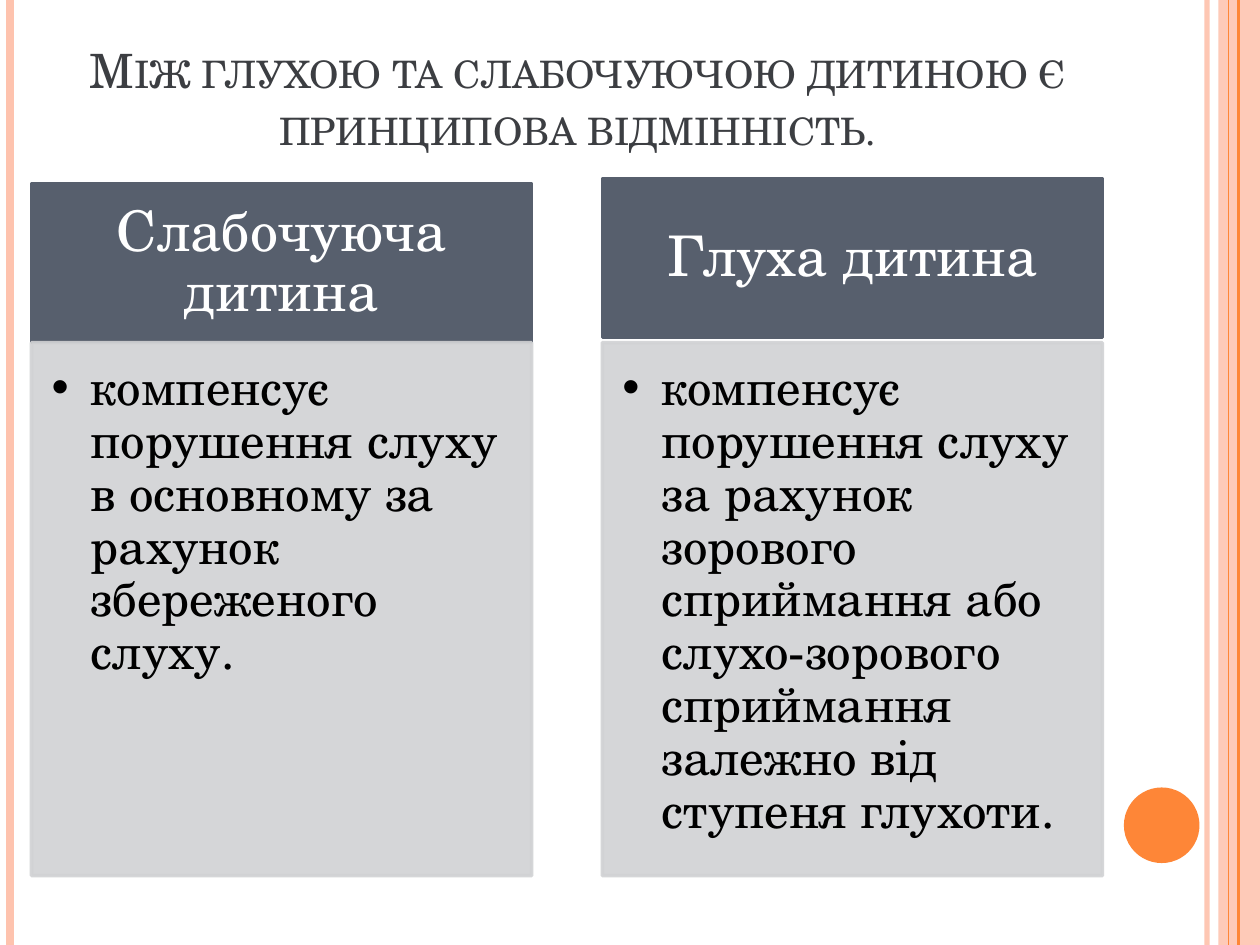
from dataclasses import dataclass

from pptx import Presentation
from pptx.dml.color import RGBColor
from pptx.enum.shapes import MSO_CONNECTOR, MSO_SHAPE
from pptx.enum.text import MSO_ANCHOR, MSO_AUTO_SIZE, PP_ALIGN
from pptx.oxml.ns import qn
from pptx.oxml.xmlchemy import OxmlElement
from pptx.util import Inches, Pt

COLS, ROWS = 100, 75


@dataclass(frozen=True)
class Theme:
    face: str = "TeX Gyre Schola"
    title: str = "3C3E42"
    slate: str = "575F6D"
    mist: str = "D1D2D4"
    peach: str = "FEC3AE"
    flame: str = "FE8637"
    white: str = "FFFFFF"
    black: str = "000000"
    big: int = 32
    text: int = 28
    head: int = 27


def put(item, **values):
    for name, value in values.items():
        setattr(item, name, value)


class Page:
    def __init__(self, deck, theme):
        self.theme = theme
        self.slide = deck.slides.add_slide(deck.slide_layouts.get_by_name("Comparison"))
        self.col = deck.slide_width / COLS
        self.row = deck.slide_height / ROWS

    def box(self, x, y, w, h):
        """Turn grid columns and rows into slide lengths."""
        return [round(n * unit) for n, unit in
                zip((x, y, w, h), (self.col, self.row) * 2)]

    def fade(self, item, alpha):
        """Set the opacity, in percent, of every colour of a shape."""
        if alpha < 100:
            for color in item.element.spPr.iter(qn("a:srgbClr")):
                node = OxmlElement("a:alpha")
                node.set("val", str(alpha * 1000))
                color.append(node)

    def paint(self, item, color, edge=0, alpha=100):
        rgb = RGBColor.from_string(color)
        item.fill.solid()
        item.fill.fore_color.rgb = rgb
        if edge:
            item.line.color.rgb = rgb
            item.line.width = Pt(edge)
        else:
            item.line.fill.background()
        self.fade(item, alpha)

    def stripe(self, x, color, width, alpha=100):
        """Draw an upright line over the full slide height."""
        left, top, _, end = self.box(x, 0, 0, ROWS)
        line = self.slide.shapes.add_connector(MSO_CONNECTOR.STRAIGHT, left, top, left, end)
        line.line.color.rgb = RGBColor.from_string(color)
        line.line.width = Pt(width)
        self.fade(line, alpha)
        line.element.spPr.append(OxmlElement("a:effectLst"))

    def shape(self, kind, place, color, alpha=100):
        item = self.slide.shapes.add_shape(kind, *self.box(*place))
        item.shadow.inherit = False
        self.paint(item, color, alpha=alpha)

    def label(self, idx, place, text, size, color, pads, anchor, align, space=0.9):
        """Fill a placeholder; pads are left, top, right, bottom in inches."""
        item = self.slide.placeholders[idx]
        put(item, **dict(zip(("left", "top", "width", "height"), self.box(*place))))
        frame = item.text_frame
        frame.text = text
        put(frame, word_wrap=True, auto_size=MSO_AUTO_SIZE.NONE, vertical_anchor=anchor)
        sides = ("margin_left", "margin_top", "margin_right", "margin_bottom")
        put(frame, **dict(zip(sides, map(Inches, pads))))
        para = frame.paragraphs[0]
        put(para, alignment=align, line_spacing=space, space_before=Pt(0), space_after=Pt(0))
        font = para.runs[0].font
        put(font, name=self.theme.face, size=Pt(size), bold=False)
        font.color.rgb = RGBColor.from_string(color)
        return item

    def title(self, text):
        look = self.theme
        item = self.label(0, (5, 5, 81.7, 12.5), text, look.head, look.title,
                          (0.1, 0.05, 0.1, 0.52), MSO_ANCHOR.BOTTOM, PP_ALIGN.CENTER, 1.0)
        item.element.find(".//" + qn("a:rPr")).set("cap", "small")

    def header(self, idx, place, text):
        look = self.theme
        item = self.label(idx, place, text, look.big, look.white,
                          (0.25, 0.14, 0.25, 0.14), MSO_ANCHOR.MIDDLE, PP_ALIGN.CENTER)
        self.paint(item, look.slate, edge=2)

    def list(self, idx, place, text):
        look = self.theme
        item = self.label(idx, place, text, look.text, look.black,
                          (0.16, 0.16, 0.22, 0.24), MSO_ANCHOR.TOP, PP_ALIGN.LEFT)
        self.paint(item, look.mist, edge=2, alpha=90)
        props = item.element.find(".//" + qn("a:pPr"))
        props.set("marL", str(Inches(0.31)))
        props.set("indent", str(Inches(-0.31)))
        dot = OxmlElement("a:buChar")
        dot.set("char", "•")
        props.append(dot)


def main():
    deck = Presentation()
    put(deck, slide_width=Inches(10), slide_height=Inches(7.5))
    look = Theme()
    page = Page(deck, look)

    page.stripe(95.8, look.peach, 3, 93)
    page.stripe(0.8, look.peach, 4.5)
    page.shape(MSO_SHAPE.RECTANGLE, (96.7, 0, 3.3, ROWS), look.peach, 87)
    page.stripe(98.3, look.flame, 1.5)
    page.stripe(97.5, look.flame, 0.75)
    page.shape(MSO_SHAPE.OVAL, (89.2, 62.5, 6, 6), look.flame)

    page.title("Між глухою та слабочуючою дитиною є принципова відмінність.")
    wide, tall, top = 39.7, 12.6, 27.2
    cards = (
        (2.5, 14.6, "Слабочуюча дитина",
         "компенсує порушення слуху в основному за рахунок збереженого слуху."),
        (47.8, 14.2, "Глуха дитина",
         "компенсує порушення слуху за рахунок зорового сприймання або "
         "слухо-зорового сприймання залежно від ступеня глухоти."),
    )
    for idx, (left, high, name, text) in zip((1, 3), cards):
        page.header(idx, (left, high, wide, tall), name)
        page.list(idx + 1, (left, top, wide, 42.3), text)

    deck.save("out.pptx")


if __name__ == "__main__":
    main()
